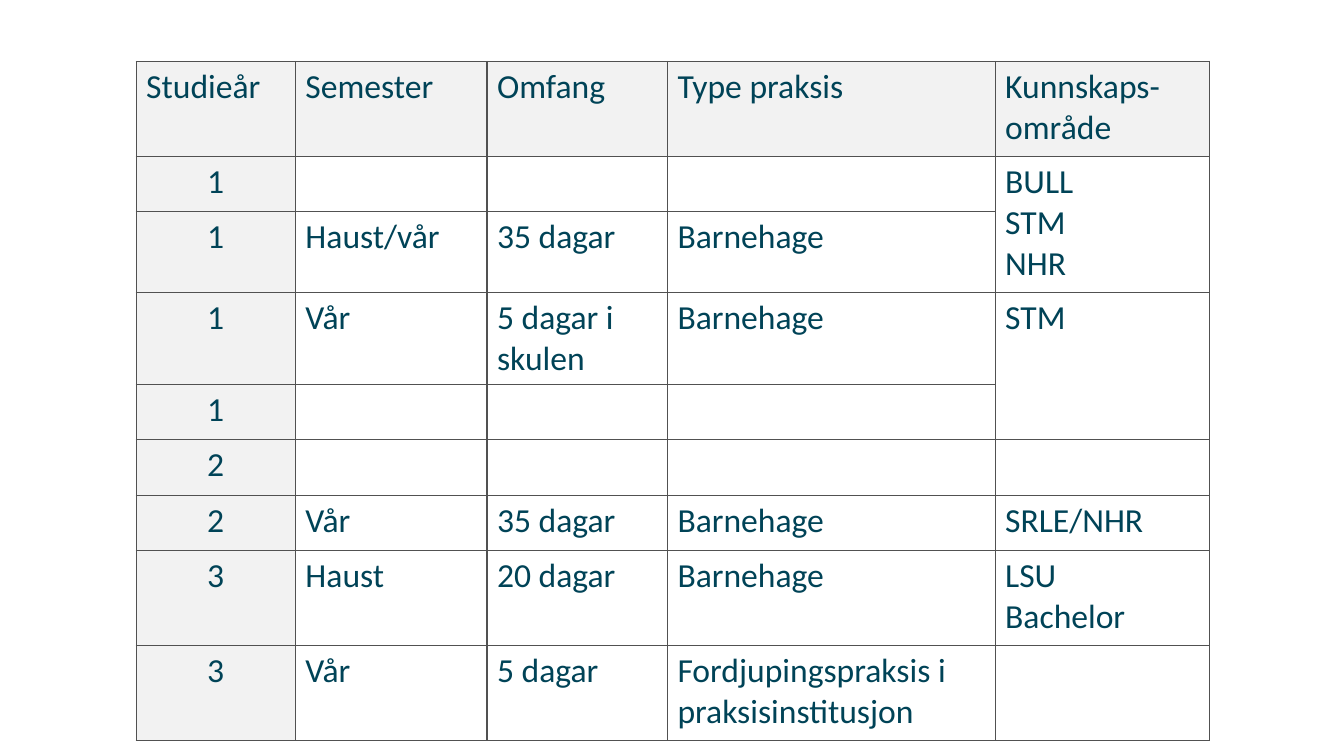
from dataclasses import dataclass

from lxml.etree import SubElement
from pptx import Presentation
from pptx.dml.color import RGBColor
from pptx.enum.text import PP_ALIGN
from pptx.oxml.ns import qn
from pptx.util import Inches, Pt


@dataclass(frozen=True)
class Theme:
    """Hold the colours, font and sizes of the slide."""
    font: str = "Calibri"
    text_size: float = 24
    text: str = "004357"
    shaded: str = "F2F2F2"
    plain: str = "FFFFFF"
    border: str = "515151"
    border_width: float = 1


THEME = Theme()
COLUMN_WIDTHS = [1.58, 1.9, 1.79, 3.25, 2.13]
ROW_HEIGHTS = [0.94, 0.55, 0.8, 0.55, 0.55, 0.55, 0.55, 0.94, 0.94]
PRACTICE_ROWS = [
    ["Studieår", "Semester", "Omfang", "Type praksis", "Kunnskaps-område"],
    ["1", "", "", "", "BULL\nSTM\nNHR"],
    ["1", "Haust/vår", "35 dagar", "Barnehage", ""],
    ["1", "Vår", "5 dagar i skulen", "Barnehage", "STM"],
    ["1", "", "", "", ""],
    ["2", "", "", "", ""],
    ["2", "Vår", "35 dagar", "Barnehage", "SRLE/NHR"],
    ["3", "Haust", "20 dagar", "Barnehage", "LSU\nBachelor"],
    ["3", "Vår", "5 dagar", "Fordjupingspraksis i praksisinstitusjon", ""],
]
MERGED_AREA_ROWS = [(1, 2), (3, 4)]


def add_borders(cell):
    """Draw a line on every side of a cell."""
    properties = cell._tc.get_or_add_tcPr()
    for side in ("lnL", "lnR", "lnT", "lnB"):
        line = SubElement(properties, qn(f"a:{side}"), w=str(Pt(THEME.border_width)))
        fill = SubElement(line, qn("a:solidFill"))
        SubElement(fill, qn("a:srgbClr"), val=THEME.border)


def write_text(cell, text, alignment):
    """Write each line of text as one paragraph of a cell."""
    frame = cell.text_frame
    for index, line in enumerate(text.split("\n")):
        paragraph = frame.add_paragraph() if index else frame.paragraphs[0]
        paragraph.alignment = alignment
        paragraph.font.size = Pt(THEME.text_size)
        if line:
            run = paragraph.add_run()
            run.text = line
            run.font.name = THEME.font
            run.font.size = Pt(THEME.text_size)
            run.font.color.rgb = RGBColor.from_string(THEME.text)


def add_practice_table(slide, left, top):
    """Place the practice overview with its top left corner at the given point."""
    frame = slide.shapes.add_table(
        len(ROW_HEIGHTS), len(COLUMN_WIDTHS), Inches(left), Inches(top),
        Inches(sum(COLUMN_WIDTHS)), Inches(sum(ROW_HEIGHTS)))
    table = frame.table
    table.horz_banding = False
    for column, width in zip(table.columns, COLUMN_WIDTHS):
        column.width = Inches(width)
    for row, height in zip(table.rows, ROW_HEIGHTS):
        row.height = Inches(height)
    for row_index, texts in enumerate(PRACTICE_ROWS):
        for column_index, text in enumerate(texts):
            cell = table.cell(row_index, column_index)
            is_header = row_index == 0
            is_year = column_index == 0
            centred = is_year and not is_header
            add_borders(cell)
            cell.fill.solid()
            color = THEME.shaded if is_header or is_year else THEME.plain
            cell.fill.fore_color.rgb = RGBColor.from_string(color)
            write_text(cell, text, PP_ALIGN.CENTER if centred else PP_ALIGN.LEFT)
    area_column = len(COLUMN_WIDTHS) - 1
    for first, last in MERGED_AREA_ROWS:
        table.cell(first, area_column).merge(table.cell(last, area_column))
    table.first_row = False


def main():
    """Build and save the presentation."""
    presentation = Presentation()
    presentation.slide_width = Inches(13.33)
    presentation.slide_height = Inches(7.5)
    slide = presentation.slides.add_slide(presentation.slide_layouts[6])
    add_practice_table(slide, 1.35, 0.61)
    presentation.save("out.pptx")


if __name__ == "__main__":
    main()
